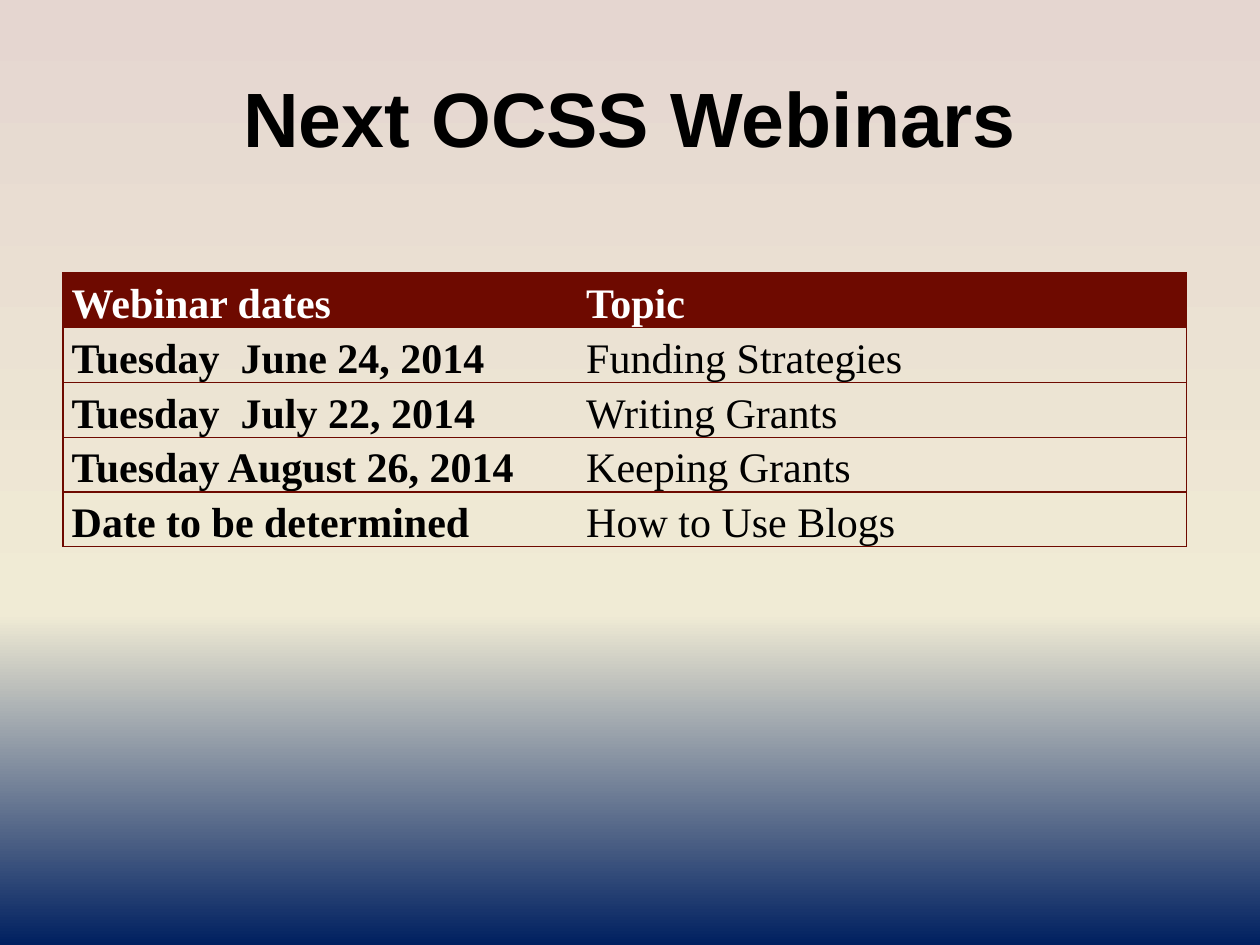
from copy import deepcopy
from typing import NamedTuple

from pptx import Presentation
from pptx.dml.color import RGBColor
from pptx.enum.text import MSO_ANCHOR, PP_ALIGN
from pptx.oxml.ns import qn
from pptx.util import Pt
from lxml import etree

MIDDLE, TOP = MSO_ANCHOR.MIDDLE, MSO_ANCHOR.TOP
CENTER, LEFT = PP_ALIGN.CENTER, PP_ALIGN.LEFT

MAROON, BLACK, WHITE = "6E0A00", "000000", "FFFFFF"
NO_GRID_STYLE = "{2D5ABB26-0587-4C30-8999-92F81FD0307C}"
BORDER_WIDTH = Pt(0.75)
ROW_HEIGHT = 31.3
COLUMN_WIDTHS = (294, 348)


class Webinar(NamedTuple):
    date: str
    topic: str


HEADER = Webinar("Webinar dates", "Topic")
WEBINARS = [
    Webinar("Tuesday  June 24, 2014", "Funding Strategies"),
    Webinar("Tuesday  July 22, 2014", "Writing Grants"),
    Webinar("Tuesday August 26, 2014", "Keeping Grants"),
    Webinar("Date to be determined", "How to Use Blogs"),
]
BACKGROUND_STOPS = [(0, "E5D6D0"), (0.65, "F0EBD5"), (1, "002060")]


def rgb(value: str) -> RGBColor:
    return RGBColor.from_string(value)


def set_attributes(target, values: dict) -> None:
    for name, value in values.items():
        setattr(target, name, value)


def write(tf, text: str, size: float, font: str, color: str, bold: bool,
          **paragraph_format) -> None:
    p = tf.paragraphs[0]
    set_attributes(p, paragraph_format)
    r = p.add_run()
    r.text = text
    set_attributes(r.font, {"size": Pt(size), "name": font, "bold": bold})
    r.font.color.rgb = rgb(color)


def add_border(cell, side: str) -> None:
    ln = etree.SubElement(cell._tc.get_or_add_tcPr(), qn(f"a:ln{side}"),
                          w=str(BORDER_WIDTH))
    fill = etree.SubElement(ln, qn("a:solidFill"))
    etree.SubElement(fill, qn("a:srgbClr"), val=MAROON)


def fill_background(s) -> None:
    fill = s.background.fill
    fill.gradient()
    fill.gradient_angle = 270
    stop_list = next(s.element.iter(qn("a:gsLst")))
    stop_list.append(deepcopy(stop_list[-1]))
    for stop, (position, color) in zip(fill.gradient_stops, BACKGROUND_STOPS):
        stop.position = position
        stop.color.rgb = rgb(color)


def format_cell(cell, text: str, is_header: bool, is_date: bool) -> None:
    set_attributes(cell, {"margin_left": Pt(5), "margin_right": Pt(5),
                          "margin_top": Pt(0.7), "margin_bottom": 0,
                          "vertical_anchor": TOP})
    write(cell.text_frame, text, 24, "Times New Roman",
          WHITE if is_header else BLACK, is_header or is_date,
          alignment=LEFT, line_spacing=1.15, space_after=Pt(10))
    # Outer frame and row rules, with no line between the columns
    for side in ("L" if is_date else "R", "T", "B"):
        add_border(cell, side)
    if is_header:
        cell.fill.solid()
        cell.fill.fore_color.rgb = rgb(MAROON)
    else:
        cell.fill.background()


def add_schedule(s, left: float, top: float) -> None:
    rows = [HEADER, *WEBINARS]
    frame = s.shapes.add_table(len(rows), len(COLUMN_WIDTHS), Pt(left), Pt(top),
                               Pt(sum(COLUMN_WIDTHS)), Pt(ROW_HEIGHT * len(rows)))
    table = frame.table
    table.horz_banding = False
    table._tbl.tblPr.find(qn("a:tableStyleId")).text = NO_GRID_STYLE
    for column, width in zip(table.columns, COLUMN_WIDTHS):
        column.width = Pt(width)
    for i, webinar in enumerate(rows):
        table.rows[i].height = Pt(ROW_HEIGHT)
        for j, text in enumerate(webinar):
            format_cell(table.cell(i, j), text, is_header=i == 0, is_date=j == 0)


def main() -> None:
    prs = Presentation()
    set_attributes(prs, {"slide_width": Pt(720), "slide_height": Pt(540)})
    s = prs.slides.add_slide(prs.slide_layouts[5])
    fill_background(s)

    # Title
    title = s.shapes.title
    set_attributes(title, {"left": Pt(36), "top": Pt(21.6),
                           "width": Pt(648), "height": Pt(90)})
    title.text_frame.vertical_anchor = MIDDLE
    write(title.text_frame, "Next OCSS Webinars", 44, "Arial", BLACK, True,
          alignment=CENTER)

    # Webinar schedule
    add_schedule(s, 36, 156)
    prs.save("out.pptx")


if __name__ == "__main__":
    main()
